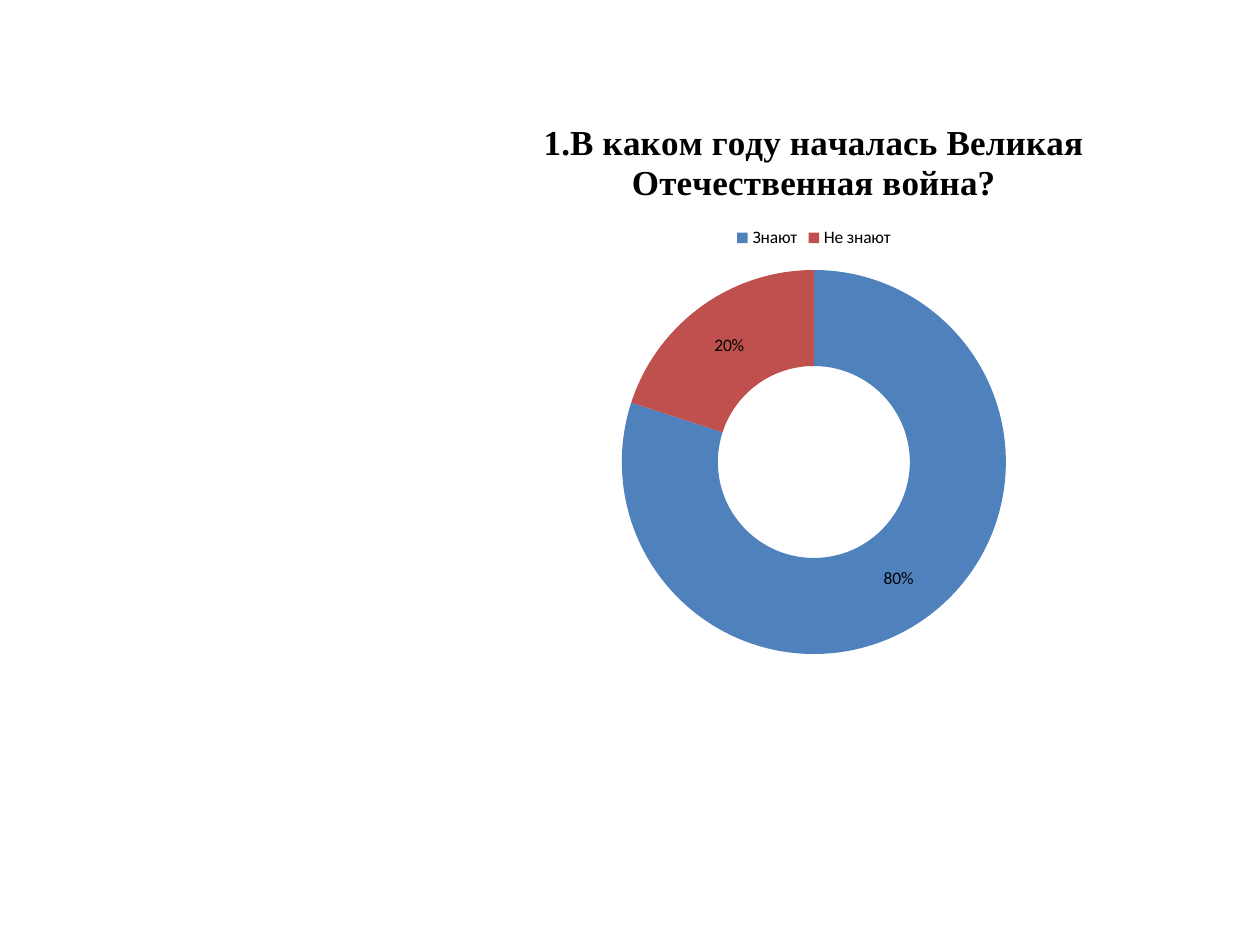
from pptx import Presentation
from pptx.chart.data import CategoryChartData
from pptx.dml.color import RGBColor
from pptx.enum.chart import XL_CHART_TYPE, XL_LEGEND_POSITION
from pptx.util import Pt

BLACK = RGBColor(0x00, 0x00, 0x00)
BLUE = RGBColor(0x4F, 0x81, 0xBD)
RED = RGBColor(0xC0, 0x50, 0x4D)

QUESTION = "1.В каком году началась Великая Отечественная война?"
ANSWERS = [("Знают", 80, BLUE), ("Не знают", 20, RED)]


def style_font(font, name, size, bold=False):
    font.name = name
    font.size = Pt(size)
    font.bold = bold
    font.color.rgb = BLACK


def add_answer_chart(page, left, top, width, height):
    data = CategoryChartData()
    data.categories = [label for label, share, color in ANSWERS]
    data.add_series("Series 1", [share for label, share, color in ANSWERS])
    chart = page.shapes.add_chart(
        XL_CHART_TYPE.DOUGHNUT, Pt(left), Pt(top), Pt(width), Pt(height), data
    ).chart
    style_font(chart.font, "Calibri", 10)

    chart.has_title = True
    title = chart.chart_title
    title.include_in_layout = False
    para = title.text_frame.paragraphs[0]
    para.text = QUESTION
    style_font(para.runs[0].font, "Times New Roman", 20, bold=True)

    chart.has_legend = True
    chart.legend.position = XL_LEGEND_POSITION.TOP
    chart.legend.include_in_layout = False

    plot = chart.plots[0]
    plot.vary_by_categories = True
    plot.has_data_labels = True
    labels = plot.data_labels
    labels.show_value = False
    labels.show_percentage = True
    labels.number_format = "0%"
    labels.number_format_is_linked = False

    for index, (label, share, color) in enumerate(ANSWERS):
        fill = plot.series[0].points[index].format.fill
        fill.solid()
        fill.fore_color.rgb = color


def main():
    deck = Presentation()
    deck.slide_width, deck.slide_height = Pt(720), Pt(540)
    page = deck.slides.add_slide(deck.slide_layouts[6])
    add_answer_chart(page, 241.2, 54.7, 447.8, 329)
    deck.save("out.pptx")


if __name__ == "__main__":
    main()
